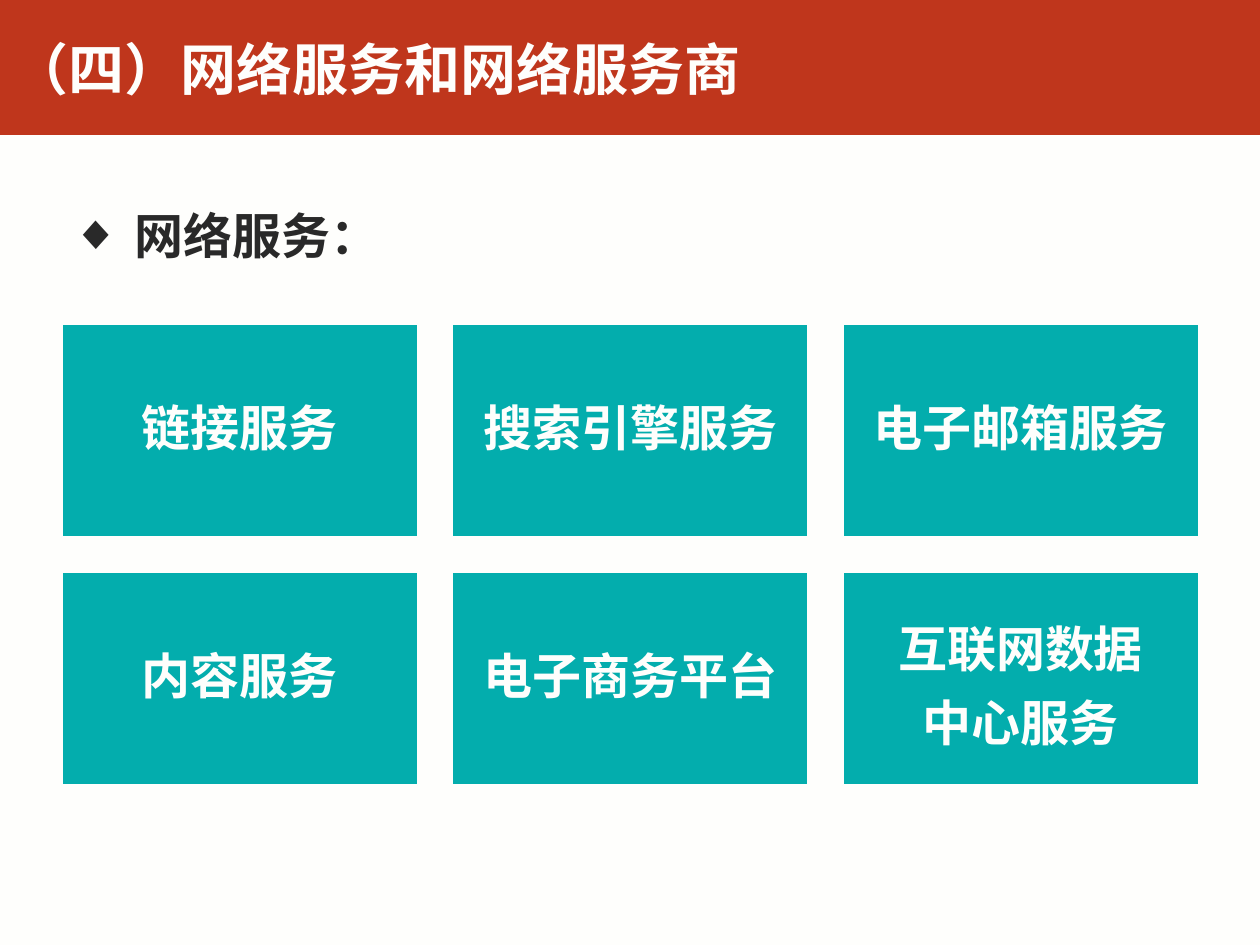
import dataclasses

import pptx
import pptx.dml.color
import pptx.enum.shapes
import pptx.enum.text
import pptx.oxml
import pptx.oxml.ns
import pptx.util

Cm = pptx.util.Cm
Pt = pptx.util.Pt
ALIGN = pptx.enum.text.PP_ALIGN
ANCHOR = pptx.enum.text.MSO_ANCHOR


@dataclasses.dataclass(frozen=True)
class Theme:
    """Colours, font and type sizes of the slide."""

    paper: str = "FEFEFC"
    band: str = "BF361C"
    card: str = "03ADAD"
    ink: str = "292929"
    font: str = "Noto Sans CJK SC"
    title_size: int = 32
    text_size: int = 28


def apply(target, values):
    """Set each named value on the target."""
    for name, value in values.items():
        setattr(target, name, value)


def colour(value):
    """Turn a hex string into a colour."""
    return pptx.dml.color.RGBColor.from_string(value)


class SlideBuilder:
    """Holds the theme and the current slide, and adds elements to it."""

    def __init__(self, presentation, theme):
        """Start a title-and-content slide with the theme's background."""
        self.theme = theme
        self.slide = presentation.slides.add_slide(presentation.slide_layouts[1])
        self.paint(self.slide.background.fill, theme.paper)

    def paint(self, fill, value):
        """Give a fill one solid colour."""
        fill.solid()
        fill.fore_color.rgb = colour(value)

    def place(self, shape, left, top, width, height):
        """Move and size a shape, in centimetres."""
        apply(shape, {"left": Cm(left), "top": Cm(top), "width": Cm(width), "height": Cm(height)})

    def set_text(self, shape, lines, size, ink, frame_format, paragraph_format):
        """Fill a shape with the lines as formatted paragraphs."""
        frame = shape.text_frame
        frame.text = "\n".join(lines)
        apply(frame, {"word_wrap": True, "auto_size": pptx.enum.text.MSO_AUTO_SIZE.NONE, **frame_format})
        for paragraph in frame.paragraphs:
            apply(paragraph, {"space_before": Pt(0), **paragraph_format})
            font = paragraph.runs[0].font
            apply(font, {"size": Pt(size), "bold": True, "name": self.theme.font})
            font.color.rgb = colour(ink)
            properties = paragraph.runs[0]._r.get_or_add_rPr()
            east_asian = pptx.oxml.parse_xml(
                f'<a:ea {pptx.oxml.ns.nsdecls("a")} typeface="{self.theme.font}"/>')
            properties.append(east_asian)

    def rectangle(self, fill, left, top, width, height):
        """Add a flat rectangle without outline."""
        shape = self.slide.shapes.add_shape(
            pptx.enum.shapes.MSO_SHAPE.RECTANGLE, Cm(left), Cm(top), Cm(width), Cm(height))
        shape.shadow.inherit = False
        self.paint(shape.fill, fill)
        shape.line.fill.background()
        return shape

    def band(self, *box):
        """Add the title band behind the placeholders."""
        shape = self.rectangle(self.theme.band, *box)
        shape.element.getparent().insert(2, shape.element)

    def title(self, text, *box):
        """Fill the title placeholder."""
        shape = self.slide.shapes.title
        self.place(shape, *box)
        self.set_text(shape, [text], self.theme.title_size, self.theme.paper,
                      {"vertical_anchor": ANCHOR.MIDDLE}, {"alignment": ALIGN.LEFT})

    def bullets(self, lines, *box):
        """Fill the body placeholder with diamond bullets."""
        shape = self.slide.placeholders[1]
        self.place(shape, *box)
        self.set_text(shape, lines, self.theme.text_size, self.theme.ink,
                      {"vertical_anchor": ANCHOR.TOP},
                      {"alignment": ALIGN.JUSTIFY, "line_spacing": 1.2})
        for paragraph in shape.text_frame.paragraphs:
            properties = paragraph._p.get_or_add_pPr()
            properties.set("marL", str(Cm(1.27)))
            properties.set("indent", str(Cm(-1.27)))
            properties.append(pptx.oxml.parse_xml(
                f'<a:buChar {pptx.oxml.ns.nsdecls("a")} char="◆"/>'))

    def card(self, lines, *box):
        """Add a service card with centred text."""
        shape = self.rectangle(self.theme.card, *box)
        self.paint(shape.line.fill, self.theme.paper)
        shape.line.width = Pt(1)
        margins = {f"margin_{side}": Cm(0.3) for side in ("left", "top", "right", "bottom")}
        self.set_text(shape, lines, self.theme.text_size, self.theme.paper,
                      {"vertical_anchor": ANCHOR.MIDDLE, **margins},
                      {"alignment": ALIGN.CENTER, "space_after": Pt(2),
                       "line_spacing": 1.2 if len(lines) > 1 else 0.9})

    def card_grid(self, cards, columns, left, top, width, height, gap):
        """Lay cards out row by row with equal gaps."""
        for index, lines in enumerate(cards):
            row, column = divmod(index, columns)
            self.card(lines, left + column * (width + gap), top + row * (height + gap), width, height)


def main():
    """Build and save the slide."""
    presentation = pptx.Presentation()
    apply(presentation, {"slide_width": Cm(25.4), "slide_height": Cm(19.05)})
    builder = SlideBuilder(presentation, Theme())
    builder.band(0, 0, 25.4, 2.72)
    builder.title("（四）网络服务和网络服务商", 0, 0.56, 26.2, 1.63)
    builder.bullets(["网络服务："], 1.19, 3.78, 24.28, 1.5)
    services = [
        ["链接服务"], ["搜索引擎服务"], ["电子邮箱服务"],
        ["内容服务"], ["电子商务平台"], ["互联网数据", "中心服务"],
    ]
    builder.card_grid(services, columns=3, left=1.25, top=6.53, width=7.17, height=4.3, gap=0.7)
    presentation.save("out.pptx")


if __name__ == "__main__":
    main()
